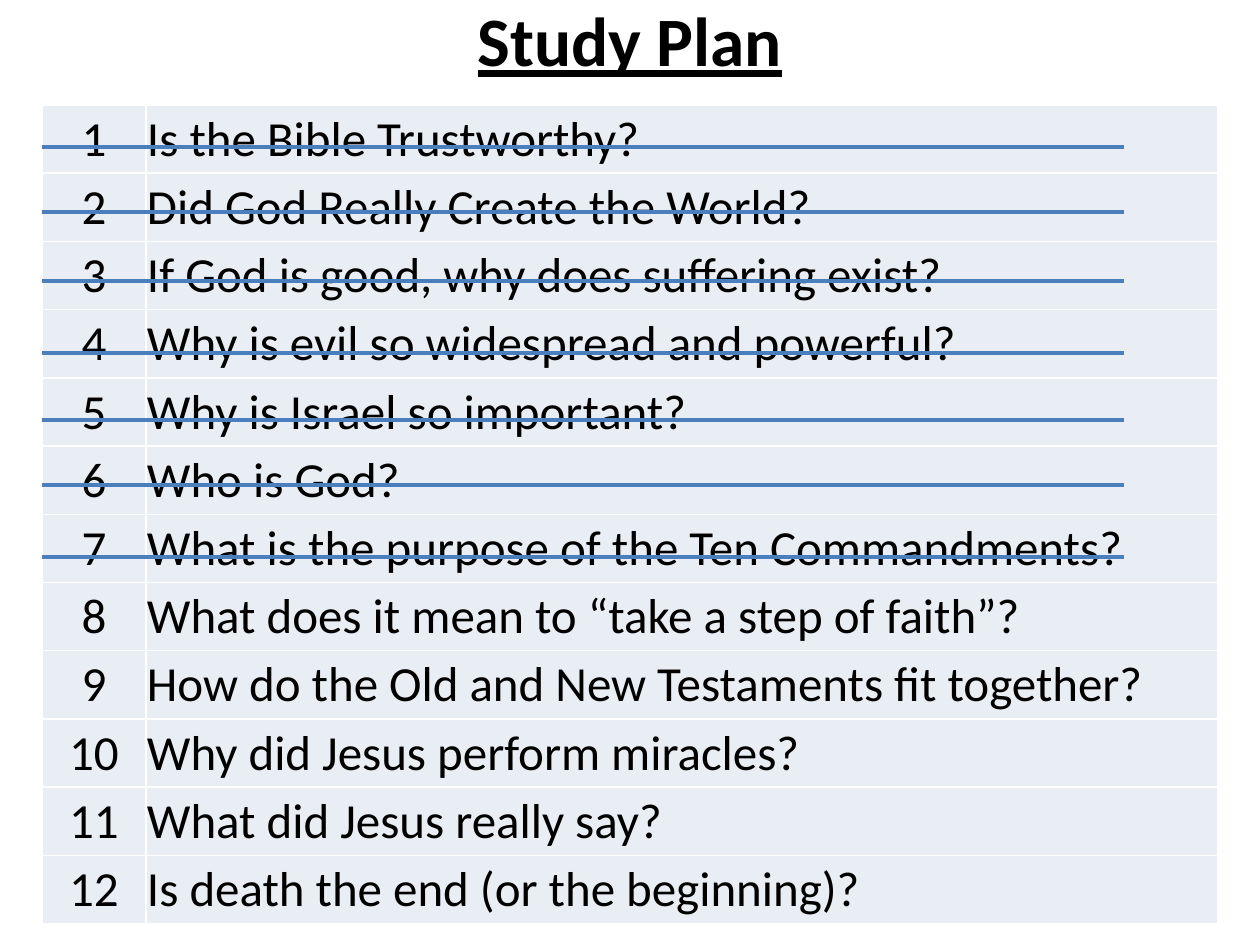
from lxml.etree import SubElement
from pptx import Presentation
from pptx.dml.color import RGBColor
from pptx.enum.shapes import MSO_CONNECTOR
from pptx.enum.text import MSO_ANCHOR, PP_ALIGN
from pptx.oxml import parse_xml
from pptx.oxml.ns import nsdecls, qn
from pptx.util import Emu, Pt

SCALE = 914400 // 126  # EMU per px
QUESTIONS = [
    "Is the Bible Trustworthy?",
    "Did God Really Create the World?",
    "If God is good, why does suffering exist?",
    "Why is evil so widespread and powerful?",
    "Why is Israel so important?",
    "Who is God?",
    "What is the purpose of the Ten Commandments?",
    "What does it mean to “take a step of faith”?",
    "How do the Old and New Testaments fit together?",
    "Why did Jesus perform miracles?",
    "What did Jesus really say?",
    "Is death the end (or the beginning)?",
]
# Hand-placed strike lines, measured from the top of the table
STRIKES = [42, 107, 176, 248, 315, 380, 452]


def px(n):
    return Emu(n * SCALE)


def rgb(value):
    return RGBColor.from_string(value)


def write(tf, text, size=28, color="000000", align=PP_ALIGN.LEFT,
          bold=False, underline=False):
    p = tf.paragraphs[0]
    p.alignment = align
    r = p.add_run()
    r.text = text
    font = r.font
    font.name, font.size = "Calibri", Pt(size)
    font.bold, font.underline = bold, underline
    font.color.rgb = rgb(color)


def add_title(s, x, y, w, h):
    sp = s.shapes.title
    sp.left, sp.top, sp.width, sp.height = map(px, (x, y, w, h))
    sp.text_frame.vertical_anchor = MSO_ANCHOR.MIDDLE
    write(sp.text_frame, "Study Plan", size=39.6, align=PP_ALIGN.CENTER,
          bold=True, underline=True)


def format_cell(cell, fill="E9EDF4", border="FFFFFF"):
    cell.vertical_anchor = MSO_ANCHOR.MIDDLE
    cell.margin_left = cell.margin_right = cell.margin_top = px(1)
    cell.margin_bottom = 0
    tc_pr = cell._tc.get_or_add_tcPr()
    for side in ("lnL", "lnR", "lnT", "lnB"):
        tc_pr.append(parse_xml(
            f'<a:{side} {nsdecls("a")} w="12700"><a:solidFill>'
            f'<a:srgbClr val="{border}"/></a:solidFill></a:{side}>'))
    cell.fill.solid()
    cell.fill.fore_color.rgb = rgb(fill)


def add_questions(s, x, y, w, h, number_w=104):
    table = s.shapes.add_table(len(QUESTIONS), 2, px(x), px(y), px(w), px(h)).table
    table.first_row = table.horz_banding = False
    table.columns[0].width = px(number_w)
    table.columns[1].width = px(w - number_w)
    for i, question in enumerate(QUESTIONS):
        number, topic = table.rows[i].cells
        format_cell(number)
        format_cell(topic)
        write(number.text_frame, str(i + 1), align=PP_ALIGN.CENTER)
        write(topic.text_frame, question)


def add_strikes(s, x, y, w):
    for dy in STRIKES:
        line = s.shapes.add_connector(MSO_CONNECTOR.STRAIGHT, px(x), px(y + dy),
                                      px(x + w), px(y + dy))
        line.line.color.rgb = rgb("4B7EBC")
        line.line.width = Pt(2.25)
        SubElement(line._element.spPr, qn("a:effectLst"))


def main():
    prs = Presentation()
    prs.slide_width, prs.slide_height = px(1260), px(945)
    s = prs.slides.add_slide(prs.slide_layouts[5])

    # Heading
    add_title(s, 63, -10, 1134, 98)
    # Numbered questions, with the finished ones struck out
    add_questions(s, 42, 105, 1176, 819)
    add_strikes(s, 42, 105, 1082)

    prs.save("out.pptx")


if __name__ == "__main__":
    main()
